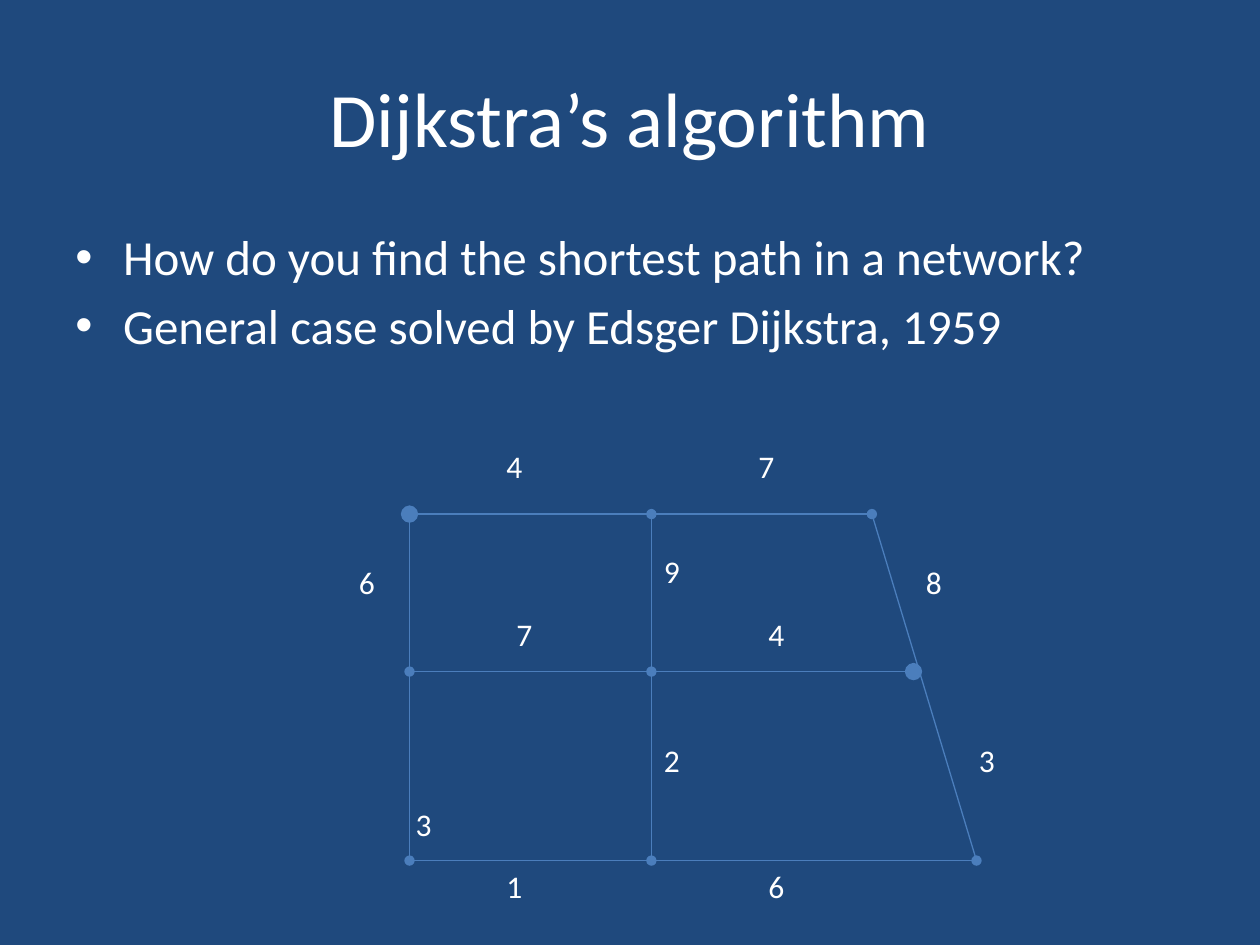
from dataclasses import dataclass

from lxml import etree
from pptx import Presentation
from pptx import util as u
from pptx.dml.color import RGBColor
from pptx.enum import shapes, text
from pptx.oxml.ns import qn


@dataclass(frozen=True)
class Theme:
    background: RGBColor = RGBColor(0x1F, 0x49, 0x7D)
    ink: RGBColor = RGBColor(0xFF, 0xFF, 0xFF)
    edge: RGBColor = RGBColor(0x4B, 0x7E, 0xBC)
    font: str = "Calibri"
    title_size: int = 44
    body_size: int = 28
    weight_size: int = 18
    edge_width: float = 0.75


THEME = Theme()

TITLE = "Dijkstra’s algorithm"
BULLETS = [
    "How do you find the shortest path in a network?",
    "General case solved by Edsger Dijkstra, 1959",
]

NODES = {
    "top left": (0.5, 0.58), "top middle": (2.42, 0.58), "top right": (4.17, 0.58),
    "middle left": (0.5, 1.83), "centre": (2.42, 1.83), "middle right": (4.5, 1.83),
    "bottom left": (0.5, 3.33), "bottom middle": (2.42, 3.33), "bottom right": (5, 3.33),
}
EDGES = [
    ("top left", "top right", "lg", "med"),
    ("top left", "bottom left", None, None),
    ("bottom left", "bottom right", "med", "med"),
    ("top right", "bottom right", None, None),
    ("middle left", "middle right", "med", "lg"),
    ("top middle", "centre", "med", "med"),
    ("centre", "bottom middle", None, "med"),
]
WEIGHTS = [
    ("4", 1.17, 0, 0.5), ("7", 3.17, 0, 0.33),
    ("6", 0, 0.92, 0.33), ("9", 2.42, 0.83, 0.42), ("8", 4.5, 0.92, 0.33),
    ("7", 1.25, 1.33, 0.42), ("4", 3.25, 1.33, 0.42),
    ("3", 0.45, 2.84, 0.45), ("2", 2.42, 2.33, 0.33), ("3", 4.92, 2.33, 0.33),
    ("1", 1.17, 3.33, 0.42), ("6", 3.25, 3.33, 0.42),
]
WEIGHT_HEIGHT = 0.51


def add_text_box(slide, box, lines, size):
    shape = slide.shapes.add_textbox(*(u.Inches(value) for value in box))
    frame = shape.text_frame
    frame.word_wrap = True
    for index, line in enumerate(lines):
        paragraph = frame.add_paragraph() if index else frame.paragraphs[0]
        run = paragraph.add_run()
        run.text = line
        run.font.name = THEME.font
        run.font.size = u.Pt(size)
        run.font.color.rgb = THEME.ink
    return frame


def add_title(slide, box):
    frame = add_text_box(slide, box, [TITLE], THEME.title_size)
    frame.vertical_anchor = text.MSO_ANCHOR.MIDDLE
    frame.paragraphs[0].alignment = text.PP_ALIGN.CENTER


def add_bullets(slide, box):
    frame = add_text_box(slide, box, BULLETS, THEME.body_size)
    indent = u.Inches(0.38)
    for paragraph in frame.paragraphs:
        paragraph.space_before = u.Pt(THEME.body_size * 0.2)
        properties = paragraph._p.get_or_add_pPr()
        properties.set("marL", str(indent))
        properties.set("indent", str(-indent))
        etree.SubElement(properties, qn("a:buFont")).set("typeface", "Arial")
        etree.SubElement(properties, qn("a:buChar")).set("char", "•")


def add_edge(slide, start, end, start_dot, end_dot):
    points = (u.Inches(value) for value in (*start, *end))
    connector = slide.shapes.add_connector(shapes.MSO_CONNECTOR.STRAIGHT, *points)
    connector.line.color.rgb = THEME.edge
    connector.line.width = u.Pt(THEME.edge_width)
    outline = connector.line._get_or_add_ln()
    for tag, dot in (("a:headEnd", start_dot), ("a:tailEnd", end_dot)):
        if dot:
            ending = etree.SubElement(outline, qn(tag))
            for name, value in (("type", "oval"), ("w", dot), ("len", dot)):
                ending.set(name, value)
    etree.SubElement(connector._element.spPr, qn("a:effectLst"))


def add_network(slide, box):
    left, top = box[:2]
    nodes = {name: (left + x, top + y) for name, (x, y) in NODES.items()}
    for start, end, start_dot, end_dot in EDGES:
        add_edge(slide, nodes[start], nodes[end], start_dot, end_dot)
    for weight, x, y, width in WEIGHTS:
        label_box = (left + x, top + y, width, WEIGHT_HEIGHT)
        frame = add_text_box(slide, label_box, [weight], THEME.weight_size)
        frame.auto_size = text.MSO_AUTO_SIZE.SHAPE_TO_FIT_TEXT


def main():
    presentation = Presentation()
    presentation.slide_width = u.Inches(10)
    presentation.slide_height = u.Inches(7.5)
    slide = presentation.slides.add_slide(presentation.slide_layouts[6])
    slide.background.fill.solid()
    slide.background.fill.fore_color.rgb = THEME.background
    add_title(slide, (0.5, 0.3, 9, 1.25))
    add_bullets(slide, (0.5, 1.75, 9, 4.95))
    add_network(slide, (2.75, 3.5, 5.25, 3.84))
    presentation.save("out.pptx")


if __name__ == "__main__":
    main()
